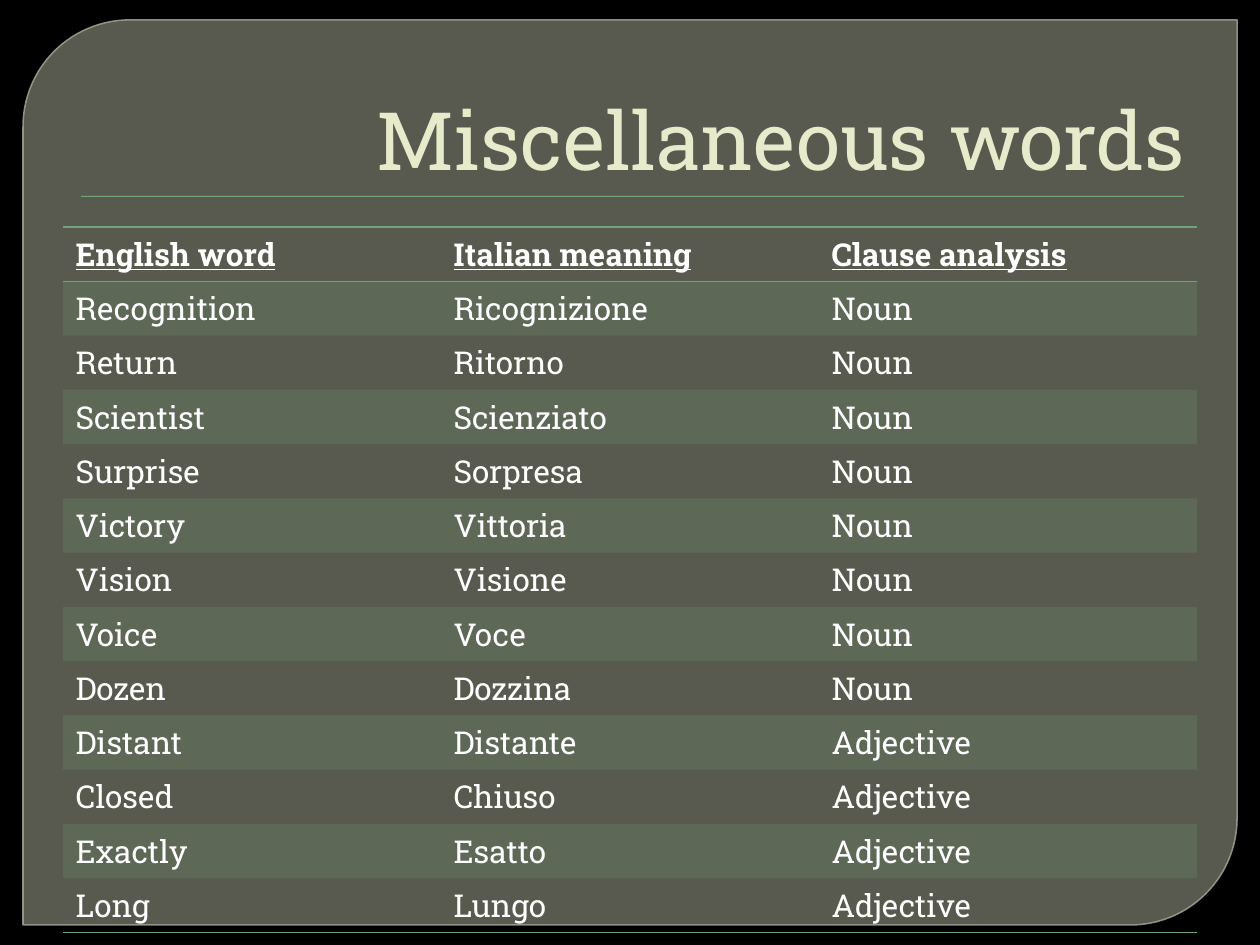
from typing import NamedTuple

from lxml.etree import SubElement
from pptx import Presentation
from pptx.dml.color import RGBColor
from pptx.enum.shapes import MSO_SHAPE as Shape
from pptx.enum.text import MSO_ANCHOR as Anchor, PP_ALIGN as Align
from pptx.oxml import parse_xml
from pptx.oxml.ns import nsdecls, qn
from pptx.util import Emu, Pt

PX_PER_INCH = 126
FONT = "Roboto Slab"
NO_STYLE = "{2D5ABB26-0587-4C30-8999-92F81FD0307C}"

BLACK = RGBColor(0x00, 0x00, 0x00)
WHITE = RGBColor(0xFF, 0xFF, 0xFF)
CREAM = RGBColor(0xE7, 0xEA, 0xCB)
GREEN = RGBColor(0x72, 0xA3, 0x76)
PANEL_FILL = RGBColor(0x88, 0x8B, 0x7B)
PANEL_LINE = RGBColor(0x9D, 0xA0, 0x90)


class Box(NamedTuple):
    left: int
    top: int
    width: int
    height: int

    def emu(self) -> list[Emu]:
        return [px(n) for n in self]


class Word(NamedTuple):
    english: str
    italian: str
    analysis: str


SLIDE = Box(0, 0, 1260, 945)
PANEL = Box(23, 20, 1214, 905)
RULE = Box(81, 196, 1103, 1)
TITLE = Box(63, 35, 1134, 158)
TABLE = Box(63, 227, 1134, 706)

HEADER = Word("English word", "Italian meaning", "Clause analysis")
WORDS = [
    Word("Recognition", "Ricognizione", "Noun"),
    Word("Return", "Ritorno", "Noun"),
    Word("Scientist", "Scienziato", "Noun"),
    Word("Surprise", "Sorpresa", "Noun"),
    Word("Victory", "Vittoria", "Noun"),
    Word("Vision", "Visione", "Noun"),
    Word("Voice", "Voce", "Noun"),
    Word("Dozen", "Dozzina", "Noun"),
    Word("Distant", "Distante", "Adjective"),
    Word("Closed", "Chiuso", "Adjective"),
    Word("Exactly", "Esatto", "Adjective"),
    Word("Long", "Lungo", "Adjective"),
]


def px(n: int) -> Emu:
    return Emu(round(n * 914400 / PX_PER_INCH))


def set_solid(fill, color: RGBColor, opacity: int = 100) -> None:
    """Fill with a colour; opacity is in percent."""
    fill.solid()
    fill.fore_color.rgb = color
    if opacity < 100:
        clr = fill._xPr.find(f"{qn('a:solidFill')}/{qn('a:srgbClr')}")
        SubElement(clr, qn("a:alpha"), val=str(opacity * 1000))


def add_run(p, text: str, size: int, color: RGBColor, heading: bool = False) -> None:
    r = p.add_run()
    r.text = text
    r.font.name = FONT
    r.font.size = Pt(size)
    r.font.color.rgb = color
    r.font.bold = r.font.underline = heading


def add_panel(s) -> None:
    sp = s.shapes.add_shape(Shape.ROUND_2_DIAG_RECTANGLE, *PANEL.emu())
    sp.shadow.inherit = False
    sp.adjustments[0], sp.adjustments[1] = 0.118, 0
    set_solid(sp.fill, PANEL_FILL, 65)
    sp.line.width = Pt(0.87)
    set_solid(sp.line.fill, PANEL_LINE, 88)


def add_rule(s) -> None:
    sp = s.shapes.add_shape(Shape.RECTANGLE, *RULE.emu())
    set_solid(sp.fill, GREEN)
    sp.line.fill.background()
    sp.shadow.inherit = False
    effects = sp._element.spPr.find(qn("a:effectLst"))
    effects.append(parse_xml(
        f'<a:outerShdw {nsdecls("a")} blurRad="12700" dist="12700" dir="5400000">'
        f'<a:srgbClr val="{BLACK}"><a:alpha val="75000"/></a:srgbClr></a:outerShdw>'))


def add_title(s, text: str) -> None:
    tf = s.shapes.add_textbox(*TITLE.emu()).text_frame
    tf.word_wrap = True
    tf.vertical_anchor = Anchor.BOTTOM
    p = tf.paragraphs[0]
    p.alignment = Align.RIGHT
    add_run(p, text, 46, CREAM)


def add_border(cell, side: str) -> None:
    """Draw one green cell edge; call before the cell is filled."""
    cell._tc.get_or_add_tcPr().append(parse_xml(
        f'<a:{side} {nsdecls("a")} w="12700"><a:solidFill>'
        f'<a:srgbClr val="{GREEN}"/></a:solidFill></a:{side}>'))


def add_word_table(s) -> None:
    rows = [HEADER, *WORDS]
    frame = s.shapes.add_table(len(rows), len(HEADER), *TABLE.emu())
    table = frame.table
    table.first_row = table.horz_banding = False
    table._tbl.tblPr.find(qn("a:tableStyleId")).text = NO_STYLE
    for i, word in enumerate(rows):
        is_header = i == 0
        for j, text in enumerate(word):
            cell = table.cell(i, j)
            add_run(cell.text_frame.paragraphs[0], text, 18, WHITE, is_header)
            if is_header:
                add_border(cell, "lnT")
            if is_header or i == len(rows) - 1:
                add_border(cell, "lnB")
            if i % 2:
                set_solid(cell.fill, GREEN, 20)
            else:
                cell.fill.background()


def main() -> None:
    prs = Presentation()
    prs.slide_width, prs.slide_height = px(SLIDE.width), px(SLIDE.height)
    s = prs.slides.add_slide(prs.slide_layouts[6])
    set_solid(s.background.fill, BLACK)
    add_panel(s)
    add_rule(s)
    add_title(s, "Miscellaneous words")
    add_word_table(s)
    prs.save("out.pptx")


if __name__ == "__main__":
    main()
